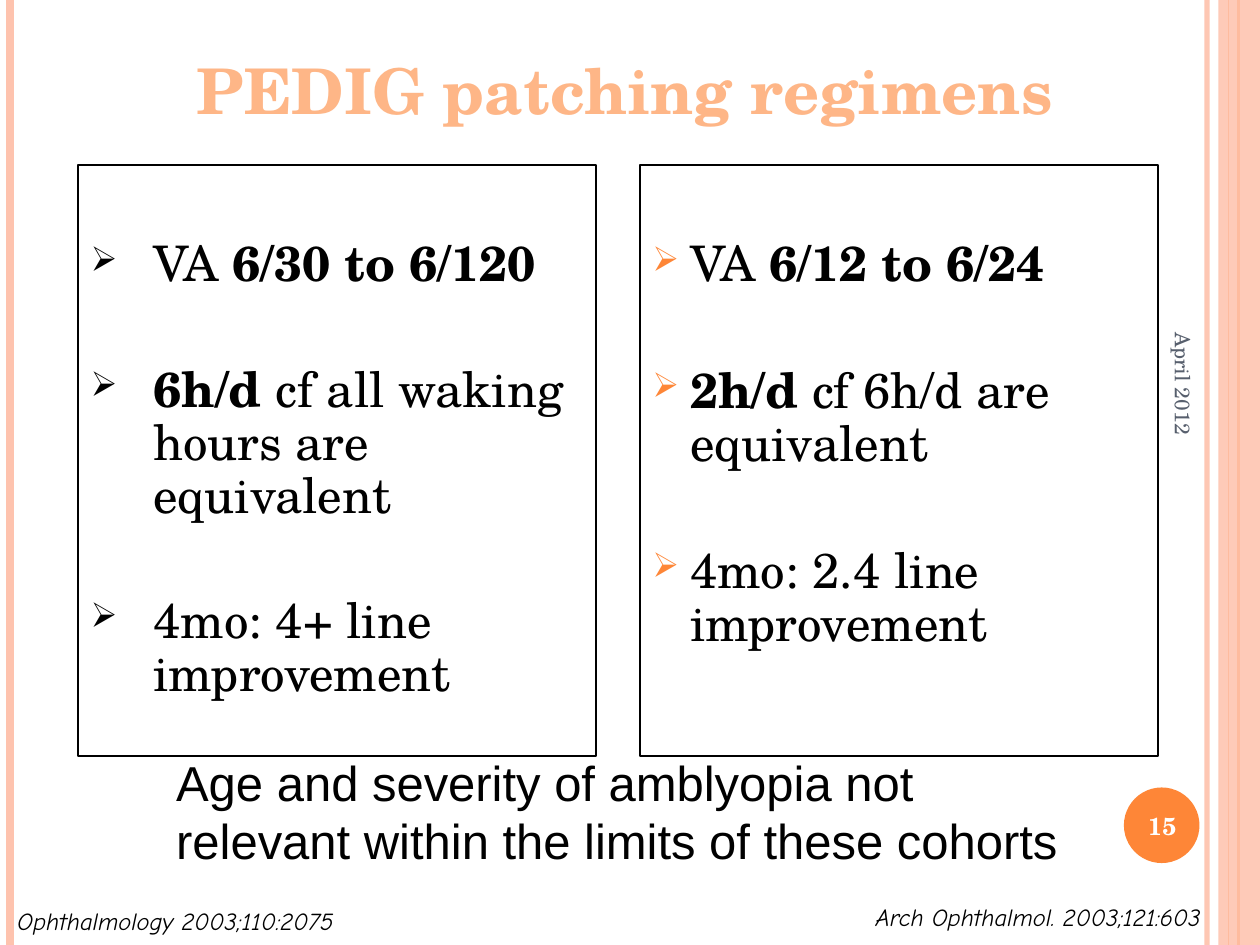
"""Build the slide on PEDIG patching regimens."""
from lxml import etree
from pptx import Presentation
from pptx.dml.color import RGBColor
from pptx.enum.shapes import MSO_CONNECTOR, MSO_SHAPE
from pptx.enum.text import MSO_ANCHOR, PP_ALIGN
from pptx.oxml.ns import qn
from pptx.util import Pt

LINE = MSO_CONNECTOR.STRAIGHT
RECT, OVAL = MSO_SHAPE.RECTANGLE, MSO_SHAPE.OVAL
TOP, MIDDLE = MSO_ANCHOR.TOP, MSO_ANCHOR.MIDDLE
LEFT, CENTER = PP_ALIGN.LEFT, PP_ALIGN.CENTER
SERIF, SANS, HAND = "TeX Gyre Schola", "Arial", "Comic Neue"
HEX = {"peach": "FEC3AE", "orange": "FE8637", "title": "FEB687",
       "black": "000000", "slate": "575F6D", "white": "FFFFFF"}
RGB = {name: RGBColor.from_string(code) for name, code in HEX.items()}

deck = Presentation()
deck.slide_width, deck.slide_height = Pt(720), Pt(540)
slide = deck.slides.add_slide(deck.slide_layouts[6])
shapes = slide.shapes


def fade(shape, share):
    for color in shape._element.spPr.iter(qn("a:srgbClr")):
        etree.SubElement(color, qn("a:alpha"), val=str(share * 1000))


def label(text, box, font, size, color, wrap=True, bold=False,
          italic=False, anchor=TOP, align=LEFT):
    shape = shapes.add_textbox(*map(Pt, box))
    frame = shape.text_frame
    frame.word_wrap, frame.vertical_anchor = wrap, anchor
    frame.text = text
    for para in frame.paragraphs:
        para.alignment = align
        face = para.font
        face.name, face.size, face.bold, face.italic = font, Pt(size), bold, italic
        face.color.rgb = RGB[color]
    return shape


for x, width, color, share in [
    (689.76, 3, "peach", 93), (5.76, 4.5, "peach", 100),
    (707.76, 1.5, "orange", 100), (702, 0.75, "orange", 100),
]:
    rule = shapes.add_connector(LINE, Pt(x), 0, Pt(x), Pt(540))
    rule.line.width = Pt(width)
    rule.line.color.rgb = RGB[color]
    etree.SubElement(rule._element.spPr, qn("a:effectLst"))
    if share < 100:
        fade(rule, share)

for kind, box, color, share in [
    (RECT, (696.24, 0, 23.76, 540), "peach", 87),
    (OVAL, (642.24, 450, 43.2, 43.2), "orange", 100),
]:
    shape = shapes.add_shape(kind, *map(Pt, box))
    shape.shadow.inherit = False
    shape.fill.solid()
    shape.fill.fore_color.rgb = RGB[color]
    shape.line.fill.background()
    if share < 100:
        fade(shape, share)

panels = [
    (44.64, 36, 41.4, "black",
     [[("VA ", False), ("6/30 to 6/120", True)],
      [("6h/d ", True), ("cf all waking hours are equivalent", False)],
      [("4mo: 4+ line improvement", False)]]),
    (365.76, 21.6, 42.3, "orange",
     [[("VA ", False), ("6/12 to 6/24", True)],
      [("2h/d ", True), ("cf 6h/d are equivalent", False)],
      [("4mo: 2.4 line improvement", False)]]),
]
for x, indent, gap, color, items in panels:
    panel = shapes.add_shape(RECT, Pt(x), Pt(94.32), Pt(295.92), Pt(337.68))
    panel.shadow.inherit = False
    panel.fill.background()
    panel.line.color.rgb = RGB["black"]
    panel.line.width = Pt(0.75)
    frame = panel.text_frame
    frame.word_wrap, frame.vertical_anchor = True, TOP
    frame.margin_top = Pt(42.5)
    for i, runs in enumerate(items):
        para = frame.paragraphs[0] if i == 0 else frame.add_paragraph()
        para.alignment, para.line_spacing = LEFT, 0.9
        para.space_before = Pt(gap if i else 0)
        para.font.name, para.font.size = SERIF, Pt(28)
        para.font.color.rgb = RGB["black"]
        for text, bold in runs:
            run = para.add_run()
            run.text, run.font.bold = text, bold
        props = para._p.get_or_add_pPr()
        props.set("marL", str(Pt(indent)))
        props.set("indent", str(-Pt(indent)))
        marks = [etree.Element(qn("a:buClr")),
                 etree.Element(qn("a:buSzPct"), val="70000"),
                 etree.Element(qn("a:buChar"), char="➢")]
        etree.SubElement(marks[0], qn("a:srgbClr"), val=HEX[color])
        for mark in marks:
            props.find(qn("a:defRPr")).addprevious(mark)

label("PEDIG patching regimens", (105.12, 25.92, 521.28, 51.12),
      SERIF, 36, "title", bold=True)
label("Age and severity of amblyopia not\nrelevant within the limits of these cohorts",
      (93.6, 426.24, 523.44, 74.88), SANS, 28, "black", wrap=False)
for text, box in [
    ("Ophthalmology 2003;110:2075", (2.88, 514.08, 214.56, 24.48)),
    ("Arch Ophthalmol. 2003;121:603", (493.2, 511.92, 223.92, 24.48)),
]:
    label(text, box, HAND, 14, "black", wrap=False, italic=True)
date = label("April 2012", (550.08, 294.48, 252, 28.8),
             SERIF, 12, "slate", anchor=MIDDLE)
date.rotation = 90
label("15", (640.08, 451.44, 48.24, 41.04), SERIF, 14, "white",
      bold=True, anchor=MIDDLE, align=CENTER)

deck.save("out.pptx")
